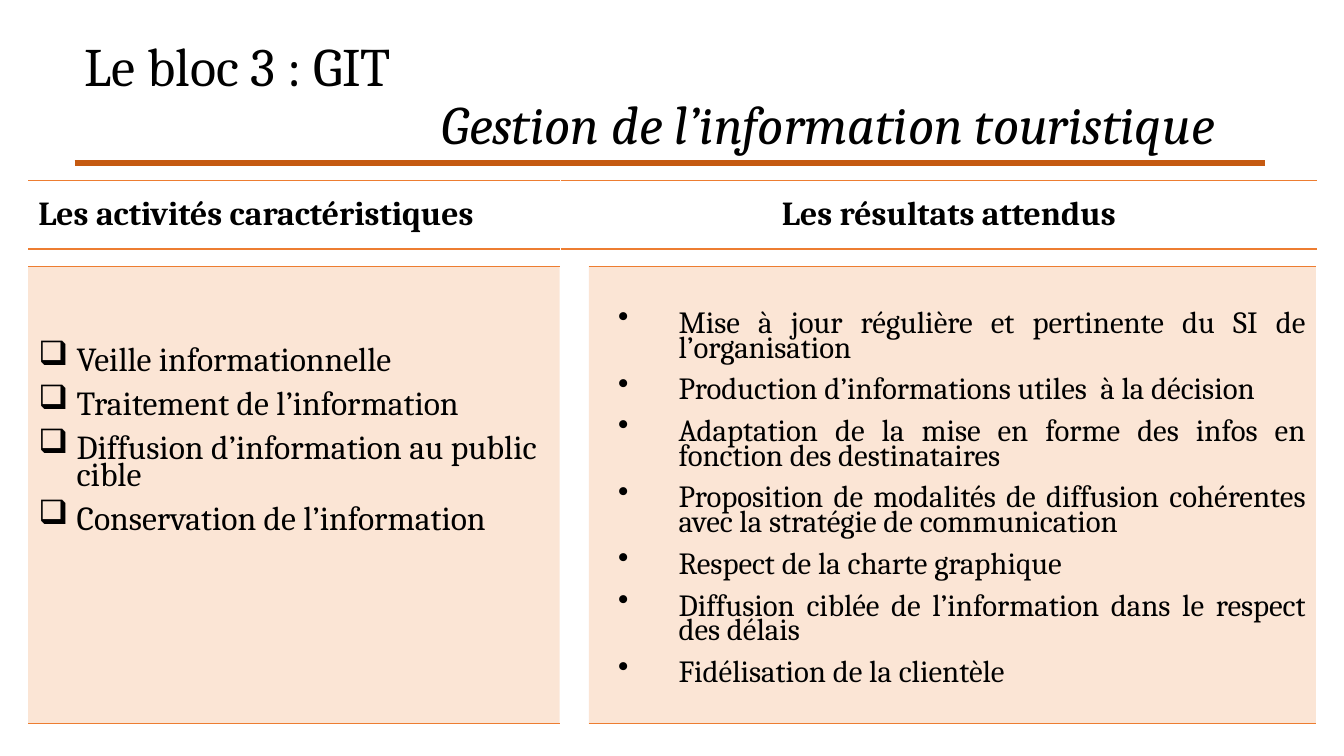
from dataclasses import dataclass
from lxml.etree import SubElement
from pptx import Presentation
from pptx.dml.color import RGBColor
from pptx.enum.shapes import MSO_CONNECTOR
from pptx.enum.text import MSO_ANCHOR, PP_ALIGN
from pptx.oxml import parse_xml
from pptx.oxml.ns import nsdecls, qn
from pptx.util import Inches, Pt


@dataclass(frozen=True)
class Theme:
    face: str = "Cambria"
    ink: str = "000000"
    rule: str = "C55A11"
    edge: str = "ED7D31"
    tint: int = 20
    title: float = 38.7
    head: float = 24
    left: float = 24
    right: float = 22


THEME = Theme()

TASKS = [
    "Veille informationnelle",
    "Traitement de l’information",
    "Diffusion d’information au public cible",
    "Conservation de l’information",
]
GOALS = [
    "Mise à jour régulière et pertinente du SI de l’organisation",
    "Production d’informations utiles  à la décision",
    "Adaptation de la mise en forme des infos en fonction des destinataires",
    "Proposition de modalités de diffusion cohérentes avec la stratégie de communication",
    "Respect de la charte graphique",
    "Diffusion ciblée de l’information dans le respect des délais",
    "Fidélisation de la clientèle",
]


def apply(target, values):
    for name, value in values.items():
        setattr(target, name, value)


def write(para, text, size, form=None, **style):
    apply(para, form or {})
    run = para.add_run()
    run.text = text
    apply(run.font, {"name": THEME.face, "size": Pt(size), **style})
    run.font.color.rgb = RGBColor.from_string(THEME.ink)


def indent(para, left, first=0):
    props = para._p.get_or_add_pPr()
    props.set("marL", str(Inches(left)))
    props.set("indent", str(Inches(first)))
    return props


def add_title(slide, box):
    left, top, width, height = box
    shape = slide.shapes.add_textbox(*map(Inches, box))
    frame = shape.text_frame
    apply(frame, {"word_wrap": True, "vertical_anchor": MSO_ANCHOR.MIDDLE})
    form = {"line_spacing": 0.9}
    write(frame.paragraphs[0], "Le bloc 3 : GIT", THEME.title, form)
    second = frame.add_paragraph()
    write(second, "Gestion de l’information touristique", THEME.title, form, italic=True)
    indent(second, 3.54)

    base = Inches(top + height)
    line = slide.shapes.add_connector(
        MSO_CONNECTOR.STRAIGHT, Inches(left), base, Inches(left + width), base)
    line.line.width = Pt(4.5)
    line.line.color.rgb = RGBColor.from_string(THEME.rule)
    SubElement(line._element.spPr, qn("a:effectLst"))


def add_edges(cell):
    paint = f'<a:solidFill><a:srgbClr val="{THEME.edge}"/></a:solidFill>'
    sides = {"L": "<a:noFill/>", "R": "<a:noFill/>", "T": paint, "B": paint}
    props = cell._tc.get_or_add_tcPr()
    for spot, (side, fill) in enumerate(sides.items()):
        edge = f'<a:ln{side} {nsdecls("a")} w="{Pt(1)}">{fill}</a:ln{side}>'
        props.insert(spot, parse_xml(edge))


def add_panel(slide, box, form):
    table = slide.shapes.add_table(1, 1, *map(Inches, box)).table
    apply(table, {"first_row": False, "horz_banding": False})
    cell = table.cell(0, 0)
    apply(cell, form)
    cell.fill.background()
    add_edges(cell)
    return cell


def add_head(slide, box, text, align, inset):
    cell = add_panel(slide, box, {
        "vertical_anchor": MSO_ANCHOR.MIDDLE, "margin_left": Inches(inset)})
    para = cell.text_frame.paragraphs[0]
    write(para, text, THEME.head, {"alignment": align}, bold=True)


def add_list(slide, box, items, size, mark, align, inset, hang):
    cell = add_panel(slide, box, {"margin_top": Inches(inset)})
    cell.fill.solid()
    cell.fill.fore_color.rgb = RGBColor.from_string(THEME.edge)
    tone = cell._tc.tcPr.find(qn("a:solidFill")).find(qn("a:srgbClr"))
    SubElement(tone, qn("a:alpha"), val=str(THEME.tint * 1000))
    frame = cell.text_frame
    form = {"line_spacing": 0.7, "space_after": Pt(12), "alignment": align}
    for spot, text in enumerate(items):
        para = frame.add_paragraph() if spot else frame.paragraphs[0]
        write(para, text, size, form)
        SubElement(indent(para, *hang), qn("a:buChar"), char=mark)


def main():
    deck = Presentation()
    apply(deck, {"slide_width": Inches(13.33), "slide_height": Inches(7.5)})
    slide = deck.slides.add_slide(deck.slide_layouts[6])
    add_title(slide, (0.74, 0.32, 11.81, 1.3))
    add_list(slide, (0.28, 2.64, 5.27, 4.54), TASKS, THEME.left, "❑",
             PP_ALIGN.LEFT, 0.83, (0.38, -0.38))
    add_head(slide, (0.28, 1.79, 5.27, 0.68), "Les activités caractéristiques",
             PP_ALIGN.LEFT, 0.1)
    add_head(slide, (5.56, 1.79, 7.5, 0.68), "Les résultats attendus",
             PP_ALIGN.CENTER, 0.3)
    add_list(slide, (5.84, 2.64, 7.21, 4.54), GOALS, THEME.right, "•",
             PP_ALIGN.JUSTIFY, 0.47, (0.79, -0.6))
    deck.save("out.pptx")


if __name__ == "__main__":
    main()
